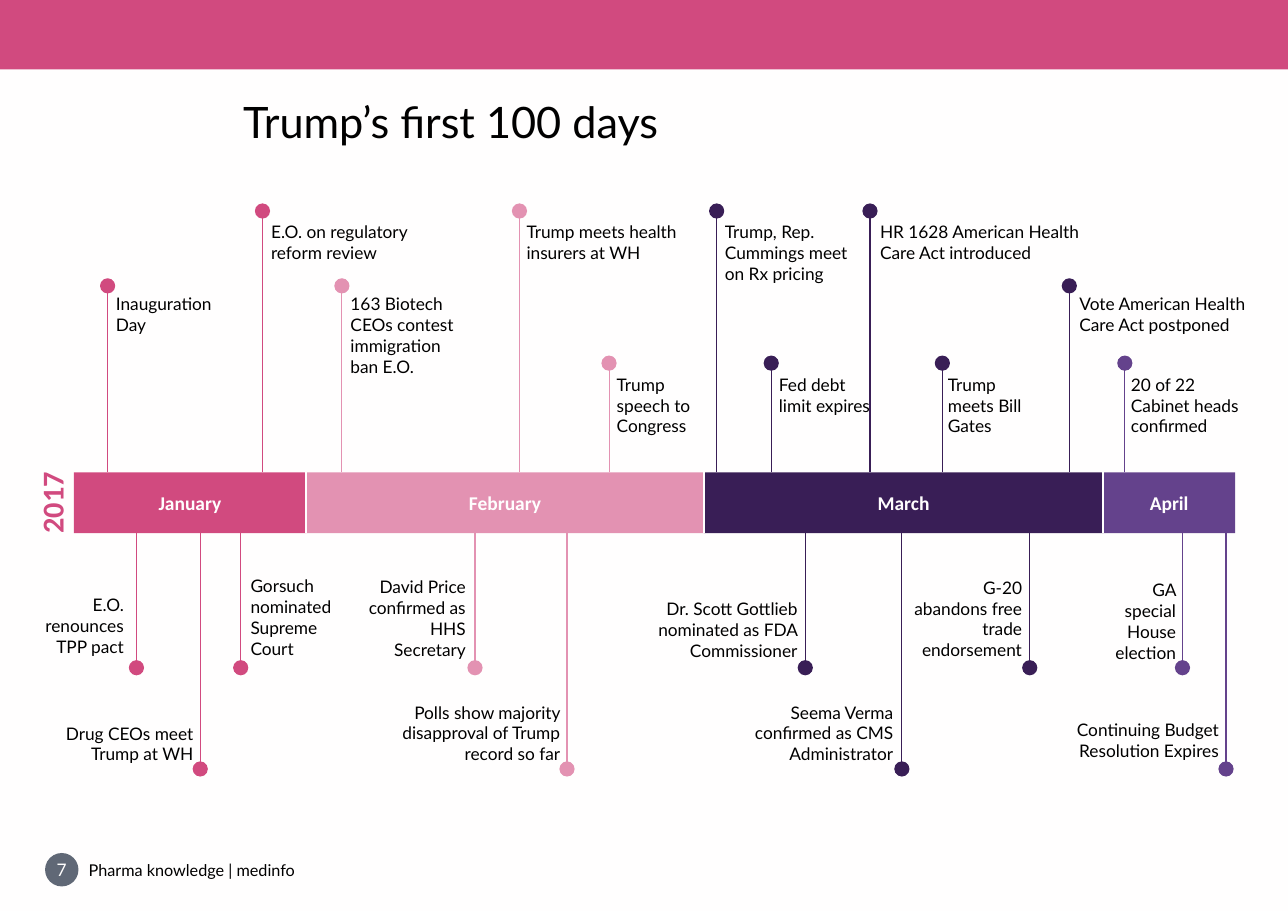
"""Build the timeline slide of the first 100 days."""
from lxml import etree
from pptx import Presentation
from pptx.dml.color import RGBColor
from pptx.enum import shapes, text
from pptx.oxml.ns import qn
from pptx.util import Cm, Pt

PINK = RGBColor(0xD1, 0x4A, 0x7F)
ROSE = RGBColor(0xE3, 0x92, 0xB2)
PLUM = RGBColor(0x39, 0x1E, 0x56)
VIOLET = RGBColor(0x64, 0x42, 0x8C)
SLATE = RGBColor(0x60, 0x68, 0x76)
BLACK = RGBColor(0, 0, 0)
PAPER = RGBColor(0xFF, 0xFE, 0xFE)
WHITE = RGBColor(0xFF, 0xFF, 0xFF)

LEFT, CENTER, RIGHT = text.PP_ALIGN.LEFT, text.PP_ALIGN.CENTER, text.PP_ALIGN.RIGHT
RECT, OVAL = shapes.MSO_SHAPE.RECTANGLE, shapes.MSO_SHAPE.OVAL
LINE = shapes.MSO_CONNECTOR.STRAIGHT
BAR_TOP, BAR_BOTTOM = 15.4, 17.38
DOT = 0.46
HIGH, MIDDLE, LOW = 6.88, 9.32, 11.84
NEAR, FAR = 21.77, 25.07

prs = Presentation()
prs.slide_width, prs.slide_height = Cm(42), Cm(29.7)
slide = prs.slides.add_slide(prs.slide_layouts[5])
slide.background.fill.solid()
slide.background.fill.fore_color.rgb = PAPER


def write(shape, words, align=LEFT, anchor=text.MSO_ANCHOR.TOP, **font):
    frame = shape.text_frame
    frame.text = words
    frame.word_wrap = True
    frame.auto_size = text.MSO_AUTO_SIZE.NONE
    frame.vertical_anchor = anchor
    paragraph = frame.paragraphs[0]
    paragraph.alignment = align
    style = {"name": "Lato", "size": Pt(16), "bold": False, "color": BLACK} | font
    paragraph.font.color.rgb = style.pop("color")
    for key, value in style.items():
        setattr(paragraph.font, key, value)


def draw(kind, left, top, width, height, color):
    if kind is LINE:
        item = slide.shapes.add_connector(
            kind, Cm(left), Cm(top), Cm(left + width), Cm(top + height))
        item.line.color.rgb = color
        item.line.width = Pt(1)
        etree.SubElement(item._element.spPr, qn("a:effectLst"))
    else:
        item = slide.shapes.add_shape(kind, Cm(left), Cm(top), Cm(width), Cm(height))
        item.shadow.inherit = False
        item.fill.solid()
        item.fill.fore_color.rgb = color
        item.line.fill.background()
    return item


draw(RECT, 0, 0, 42, 2.26, PINK)

title = slide.shapes.title
title.left, title.top, title.width, title.height = Cm(7.67), Cm(2.97), Cm(26.72), Cm(1.96)
write(title, "Trump’s first 100 days", size=Pt(40))

months = [
    ("January", 2.41, 9.98, PINK),
    ("February", 9.98, 22.96, ROSE),
    ("March", 22.96, 35.97, PLUM),
    ("April", 35.97, 40.28, VIOLET),
]

# stem x, dot y, label left, top, width, line count, words
events = [
    (3.51, MIDDLE, 3.53, 9.45, 4.01, 2, "Inauguration Day"),
    (8.56, HIGH, 8.59, 7.09, 5.41, 2, "E.O. on regulatory reform review"),
    (11.15, MIDDLE, 11.18, 9.45, 4.42, 4, "163 Biotech CEOs contest immigration ban E.O."),
    (16.94, HIGH, 16.92, 7.09, 5.99, 2, "Trump meets health insurers at WH"),
    (19.86, LOW, 19.86, 12.07, 3.1, 3, "Trump speech to Congress"),
    (23.37, HIGH, 23.39, 7.09, 4.67, 3, "Trump, Rep. Cummings meet on Rx pricing"),
    (25.15, LOW, 25.15, 12.07, 3.56, 2, "Fed debt limit expires"),
    (28.37, HIGH, 28.45, 7.09, 7.37, 2, "HR 1628 American Health Care Act introduced"),
    (30.73, LOW, 30.66, 12.07, 3.33, 3, "Trump meets Bill Gates"),
    (34.87, MIDDLE, 34.95, 9.45, 6.12, 2, "Vote American Health Care Act postponed"),
    (36.68, LOW, 36.63, 12.07, 4.45, 3, "20 of 22 Cabinet heads confirmed"),
    (4.45, NEAR, 1.02, 19.25, 3.27, 3, "E.O. renounces TPP pact"),
    (6.53, FAR, 1.73, 23.44, 4.83, 2, "Drug CEOs meet Trump at WH"),
    (7.85, NEAR, 7.92, 18.64, 4.09, 4, "Gorsuch nominated Supreme Court"),
    (15.49, NEAR, 11.66, 18.67, 3.78, 4, "David Price confirmed as HHS Secretary"),
    (18.49, FAR, 11.66, 22.76, 6.86, 3, "Polls show majority disapproval of Trump record so far"),
    (26.26, NEAR, 20.57, 19.38, 5.69, 3, "Dr. Scott Gottlieb nominated as FDA Commissioner"),
    (29.41, FAR, 24.1, 22.76, 5.28, 3, "Seema Verma confirmed as CMS Administrator"),
    (33.58, NEAR, 29.41, 18.69, 4.17, 4, "G-20 abandons free trade endorsement"),
    (38.56, NEAR, 35.53, 18.77, 3.07, 4, "GA special House election"),
    (39.98, FAR, 34.77, 23.32, 5.23, 2, "Continuing Budget Resolution Expires"),
]

for stem, dot, left, top, width, lines, words in events:
    color = next(shade for _, start, end, shade in months if start <= stem < end)
    edge = BAR_TOP if dot < BAR_TOP else BAR_BOTTOM
    draw(LINE, stem, edge, 0, dot - edge, color)
    marker = draw(OVAL, stem - DOT / 2, dot - DOT / 2, DOT, DOT, color)
    marker.line.color.rgb = color
    marker.line.width = Pt(1)
    label = slide.shapes.add_textbox(Cm(left), Cm(top), Cm(width), Cm(0.25 + 0.69 * lines))
    write(label, words, LEFT if left + width / 2 > stem else RIGHT)

for month, start, end, color in months:
    bar = draw(RECT, start, BAR_TOP, end - start, BAR_BOTTOM - BAR_TOP, color)
    write(bar, month, CENTER, text.MSO_ANCHOR.MIDDLE,
          name="Calibri", size=Pt(18), bold=True, color=PAPER)

for _, start, _, _ in months[1:]:
    divider = draw(LINE, start, BAR_TOP, 0, BAR_BOTTOM - BAR_TOP, WHITE)
    divider.line.width = Pt(2.25)

year = slide.shapes.add_textbox(Cm(0), Cm(15.67), Cm(3.38), Cm(1.45))
year.rotation = 270
write(year, "2017", CENTER, name="Calibri", size=Pt(28), bold=True, color=PINK)

page = draw(OVAL, 1.47, 27.81, 1.09, 1.09, SLATE)
write(page, "7", CENTER, text.MSO_ANCHOR.MIDDLE, color=PAPER)
for side in ("left", "right", "top", "bottom"):
    setattr(page.text_frame, f"margin_{side}", 0)

footer = slide.shapes.add_textbox(Cm(2.64), Cm(27.91), Cm(10.19), Cm(0.86))
write(footer, "Pharma knowledge | medinfo", size=Pt(15))

prs.save("out.pptx")
